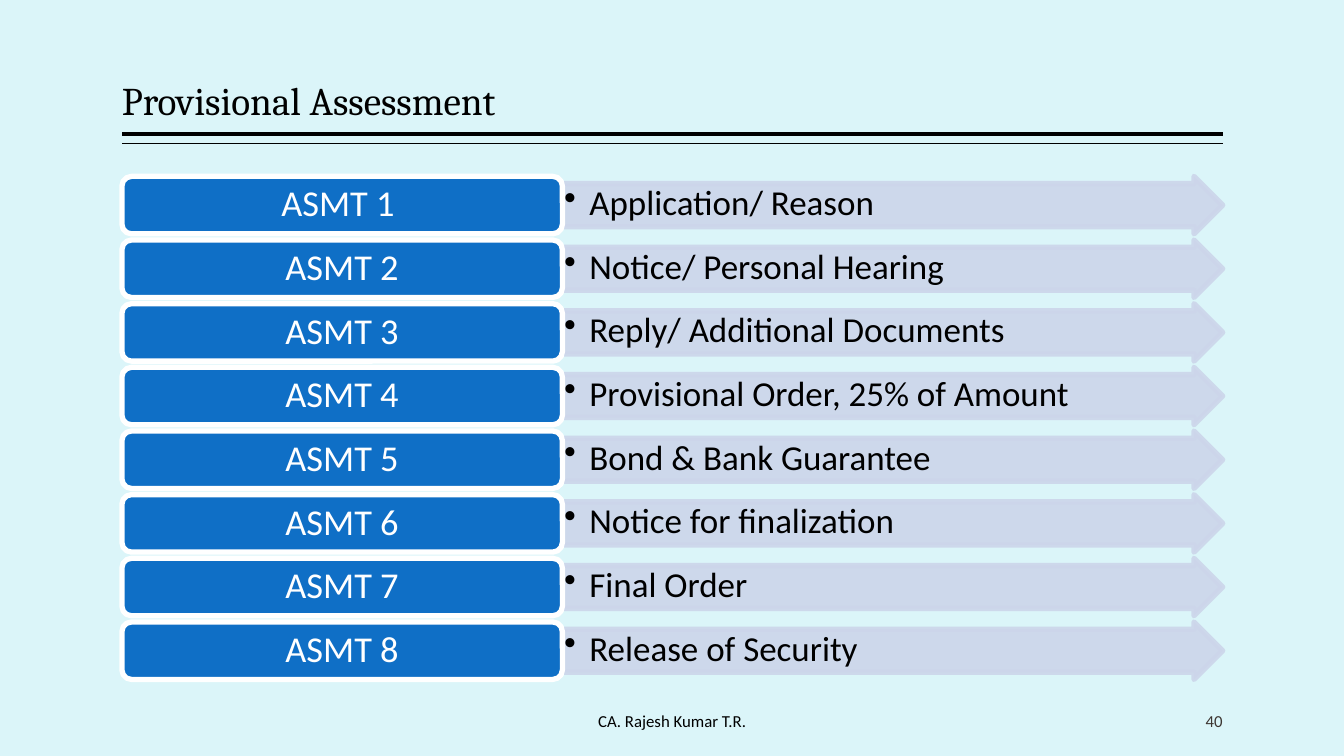
from dataclasses import dataclass

import pptx
import pptx.dml.color
import pptx.enum.shapes
import pptx.enum.text
import pptx.oxml
import pptx.oxml.ns
import pptx.shapes.autoshape
import pptx.slide
import pptx.text.text
import pptx.util

Pt = pptx.util.Pt
RGB = pptx.dml.color.RGBColor
Align = pptx.enum.text.PP_ALIGN
Anchor = pptx.enum.text.MSO_ANCHOR
Kind = pptx.enum.shapes.MSO_SHAPE
qn = pptx.oxml.ns.qn

# Colours
BACK = RGB(0xDB, 0xF5, 0xF9)
BLUE = RGB(0x0F, 0x6F, 0xC6)
PALE = RGB(0xCC, 0xD5, 0xEA)
WHITE = RGB(0xFF, 0xFF, 0xFF)
BLACK = RGB(0x00, 0x00, 0x00)
BROWN = RGB(0x3D, 0x36, 0x32)

# Layout in points
LEFT, RIGHT = 87.12, 873.36
SPLIT = 401.76
TOP, PITCH, HIGH = 126, 45.47, 41.04
EDGE = 3.78


@dataclass
class Style:
    size: float
    color: RGB
    align: Align
    anchor: Anchor
    pad: tuple[float, float]
    space: float = 1.0
    font: str = "Calibri"


@dataclass
class Box:
    left: float
    top: float
    width: float
    height: float


@dataclass
class Step:
    label: str
    text: str


@dataclass
class Rule:
    top: float
    weight: float


@dataclass
class Note:
    text: str
    box: Box
    style: Style


HEAD = Style(28, BLACK, Align.LEFT, Anchor.BOTTOM, (0, 3.6), 0.9, "Cambria")
LABEL = Style(26, WHITE, Align.CENTER, Anchor.MIDDLE, (7.8, 3.9), 0.9)
ITEM = Style(25, BLACK, Align.LEFT, Anchor.TOP, (1.25, 1.25), 0.9)
FOOT = Style(12, BLACK, Align.CENTER, Anchor.MIDDLE, (0, 3.6))
PAGE = Style(12, BROWN, Align.RIGHT, Anchor.MIDDLE, (0, 3.6))

RULES = [Rule(95.76, 3), Rule(102.6, 1)]
STEPS = [
    Step("ASMT 1 ", "Application/ Reason"),
    Step("ASMT 2", "Notice/ Personal Hearing"),
    Step("ASMT 3", "Reply/ Additional Documents"),
    Step("ASMT 4", "Provisional Order, 25% of Amount"),
    Step("ASMT 5", "Bond & Bank Guarantee"),
    Step("ASMT 6", "Notice for finalization"),
    Step("ASMT 7", "Final Order"),
    Step("ASMT 8", "Release of Security"),
]
NOTES = [
    Note("40", Box(728.64, 500.4, 144.72, 28.8), PAGE),
    Note("CA. Rajesh Kumar T.R.", Box(231.12, 500.4, 498.24, 28.8), FOOT),
]


def write(frame: pptx.text.text.TextFrame, text: str, style: Style) -> None:
    frame.word_wrap = True
    frame.auto_size = pptx.enum.text.MSO_AUTO_SIZE.NONE
    frame.vertical_anchor = style.anchor
    frame.margin_left = frame.margin_right = Pt(style.pad[0])
    frame.margin_top = frame.margin_bottom = Pt(style.pad[1])
    para = frame.paragraphs[0]
    para.alignment = style.align
    para.line_spacing = style.space
    run = para.add_run()
    run.text = text
    run.font.name = style.font
    run.font.size = Pt(style.size)
    run.font.color.rgb = style.color


def place(box: Box) -> tuple[int, int, int, int]:
    return Pt(box.left), Pt(box.top), Pt(box.width), Pt(box.height)


def draw_shape(slide: pptx.slide.Slide, kind: Kind, box: Box, fill: RGB,
               line: RGB) -> pptx.shapes.autoshape.Shape:
    shape = slide.shapes.add_shape(kind, *place(box))
    shape.shadow.inherit = False
    shape.fill.solid()
    shape.fill.fore_color.rgb = fill
    shape.line.color.rgb = line
    shape.line.width = Pt(EDGE)
    return shape


def fade(shape: pptx.shapes.autoshape.Shape, share: int) -> None:
    for color in list(shape.element.spPr.iter(qn("a:srgbClr"))):
        alpha = pptx.oxml.parse_xml(f'<a:alpha {pptx.oxml.ns.nsdecls("a")} val="{share * 1000}"/>')
        color.append(alpha)


def add_dot(para: pptx.text.text._Paragraph) -> None:
    para.level = 1
    props = para._p.get_or_add_pPr()
    props.set("marL", str(Pt(18)))
    props.set("indent", str(-Pt(18)))
    props.append(pptx.oxml.parse_xml(f'<a:buChar {pptx.oxml.ns.nsdecls("a")} char="•"/>'))


def draw_step(slide: pptx.slide.Slide, step: Step, top: float) -> None:
    arrow = draw_shape(slide, Kind.RIGHT_ARROW, Box(SPLIT, top, RIGHT - SPLIT, HIGH), PALE, PALE)
    arrow.adjustments[0], arrow.adjustments[1] = 0.75, 0.5
    fade(arrow, 90)
    write(arrow.text_frame, step.text, ITEM)
    add_dot(arrow.text_frame.paragraphs[0])
    label = draw_shape(slide, Kind.ROUNDED_RECTANGLE, Box(LEFT, top, SPLIT - LEFT, HIGH), BLUE, WHITE)
    write(label.text_frame, step.label, LABEL)


def draw_rule(slide: pptx.slide.Slide, rule: Rule) -> None:
    line = slide.shapes.add_connector(pptx.enum.shapes.MSO_CONNECTOR.STRAIGHT,
                                      Pt(RIGHT), Pt(rule.top), Pt(LEFT), Pt(rule.top))
    line.line.color.rgb = BLACK
    line.line.width = Pt(rule.weight)
    line.element.spPr.append(pptx.oxml.parse_xml(f'<a:effectLst {pptx.oxml.ns.nsdecls("a")}/>'))


def main() -> None:
    deck = pptx.Presentation()
    deck.slide_width, deck.slide_height = Pt(960), Pt(540)
    slide = deck.slides.add_slide(deck.slide_layouts[5])
    slide.background.fill.solid()
    slide.background.fill.fore_color.rgb = BACK

    # Title and its rules
    title = slide.shapes.title
    title.left, title.top, title.width, title.height = place(Box(LEFT, 5.76, RIGHT - LEFT, 86.4))
    write(title.text_frame, "Provisional Assessment", HEAD)
    for rule in RULES:
        draw_rule(slide, rule)

    # Steps
    for row, step in enumerate(STEPS):
        draw_step(slide, step, TOP + row * PITCH)

    # Footer and page number
    for note in NOTES:
        write(slide.shapes.add_textbox(*place(note.box)).text_frame, note.text, note.style)

    deck.save("out.pptx")


if __name__ == "__main__":
    main()
